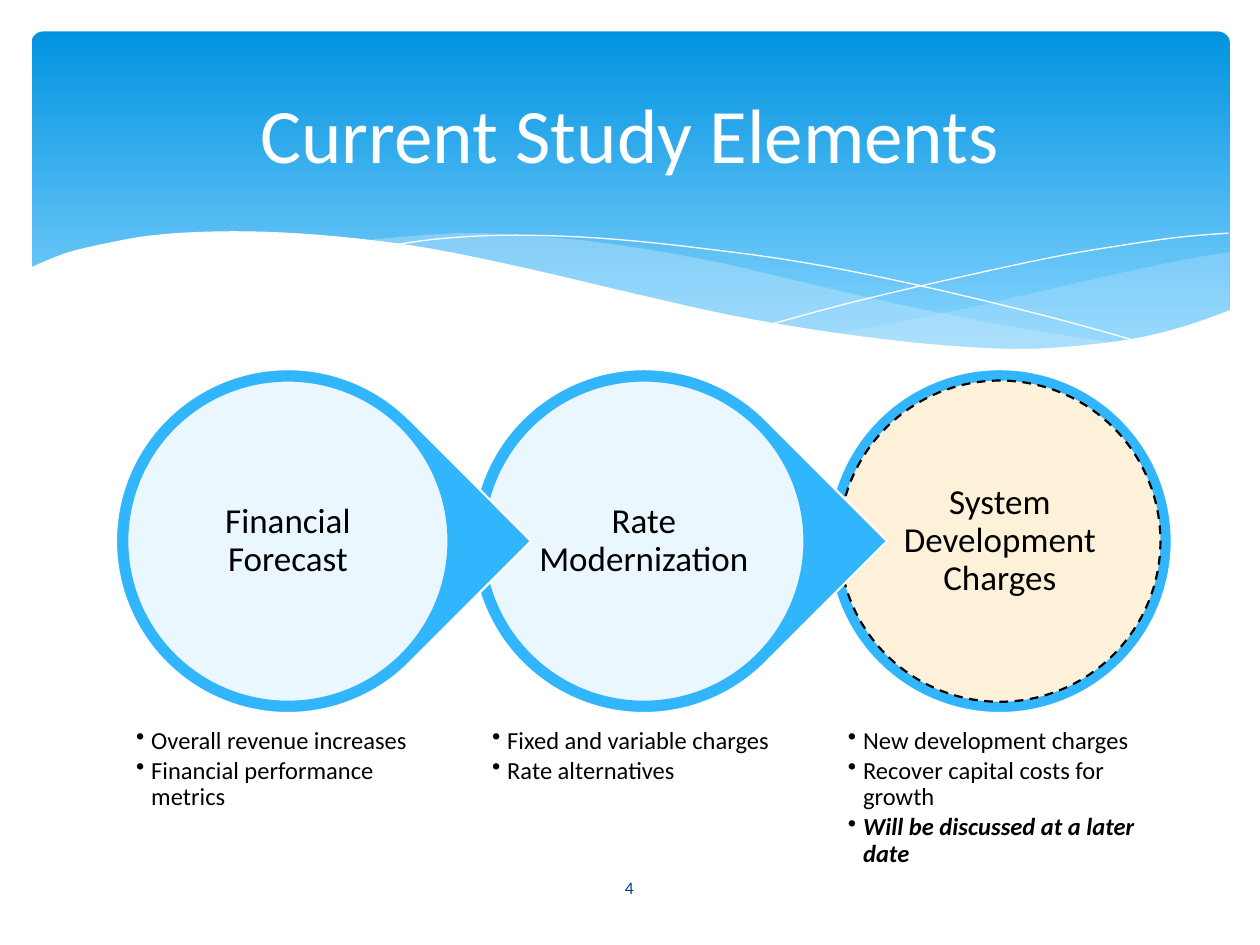
from lxml import etree
from pptx import Presentation
from pptx.dml.color import RGBColor
from pptx.enum.dml import MSO_LINE
from pptx.enum.shapes import MSO_SHAPE
from pptx.enum.text import MSO_ANCHOR, PP_ALIGN
from pptx.oxml.ns import qn
from pptx.util import Inches, Pt

ROUND, OVAL, TEAR = MSO_SHAPE.ROUNDED_RECTANGLE, MSO_SHAPE.OVAL, MSO_SHAPE.TEAR
TOP, MIDDLE = MSO_ANCHOR.TOP, MSO_ANCHOR.MIDDLE
LEFT, CENTER = PP_ALIGN.LEFT, PP_ALIGN.CENTER
DASH = MSO_LINE.DASH

FONT = "Calibri"
WHITE, BLACK, BLUE, MIST = "FFFFFF", "000000", "31B6FD", "C6E7FC"
START, PITCH, DISC, RING = 1.01, 2.825, 2.55, 2.73
MID = 4.295

STAGES = [
    ("Financial Forecast",
     ["Overall revenue increases", "Financial performance metrics"]),
    ("Rate Modernization",
     ["Fixed and variable charges", "Rate alternatives"]),
    ("System Development Charges",
     ["New development charges", "Recover capital costs for growth",
      "Will be discussed at a later date"]),
]

RIGHT_TOP = [(9.76, 2), (9.35, 2.07), (8.61, 2.23), (7.79, 2.42), (7.06, 2.57), (6.61, 2.65)]
RIGHT_LOW = [(6.61, 2.65), (7.05, 2.71), (7.57, 2.76), (8.14, 2.78), (8.63, 2.75),
             (9.05, 2.69), (9.42, 2.59), (9.76, 2.47)]
BAND_TOP = [(8.93, 2.73), (8.37, 2.65), (7.75, 2.54), (7.06, 2.4), (6.29, 2.22),
            (5.69, 2.08), (5.14, 1.98), (4.65, 1.91), (4.2, 1.87), (3.8, 1.85),
            (3.44, 1.86), (2.86, 1.91)]
BAND_LOW = [(2.86, 1.91), (3.42, 1.99), (4.04, 2.11), (4.91, 2.32), (5.66, 2.48),
            (6.34, 2.61), (6.95, 2.7), (7.48, 2.76), (7.96, 2.78), (8.48, 2.77), (8.93, 2.73)]
FALL = [(3.09, 1.95), (3.44, 1.9), (3.87, 1.87), (4.33, 1.87), (4.89, 1.9), (5.56, 1.97),
        (6.36, 2.08), (7.27, 2.26), (8.31, 2.51), (9.07, 2.72)]
RISE = [(6.13, 2.57), (6.72, 2.41), (7.48, 2.23), (8.36, 2.04), (8.95, 1.94),
        (9.38, 1.88), (9.75, 1.85)]
EDGE = [(9.77, 2.46), (9.4, 2.59), (8.99, 2.69), (8.5, 2.75), (8.09, 2.77), (7.61, 2.75),
        (7.08, 2.7), (6.48, 2.62), (5.79, 2.5), (5.03, 2.33), (4.18, 2.13), (3.4, 1.97),
        (2.71, 1.88), (2.11, 1.84), (1.61, 1.84), (1.19, 1.87), (0.85, 1.93),
        (0.52, 2.01), (0.23, 2.13)]
BASE = [(0.23, 3.29), (9.77, 3.29)]


def color(text):
    """Turn a hex string into a colour."""
    return RGBColor.from_string(text)


def paint(shape, fill=None, line=None, width=1.25, alpha=100):
    """Set the fill, opacity and outline of a shape."""
    shape.shadow.inherit = False
    if fill:
        shape.fill.solid()
        shape.fill.fore_color.rgb = color(fill)
    else:
        shape.fill.background()
    if alpha < 100:
        tint = shape.element.spPr.find(qn("a:solidFill")).find(qn("a:srgbClr"))
        etree.SubElement(tint, qn("a:alpha"), val=str(alpha * 1000))
    if line:
        shape.line.color.rgb = color(line)
        shape.line.width = Pt(width)
    else:
        shape.line.fill.background()


def smooth(points, steps=4):
    """Return a Catmull-Rom curve through the points."""
    ends = [points[0], *points, points[-1]]
    curve = [points[0]]
    for a, b, c, d in zip(ends, ends[1:], ends[2:], ends[3:]):
        for step in range(1, steps + 1):
            t = step / steps
            curve.append(tuple(
                (2 * q + (r - p) * t + (2 * p - 5 * q + 4 * r - s) * t ** 2
                 + (3 * q - p - 3 * r + s) * t ** 3) / 2
                for p, q, r, s in zip(a, b, c, d)))
    return curve


def add_wave(slide, points, close=True, **look):
    """Draw an outline through the points."""
    dots = [(Inches(x), Inches(y)) for x, y in points]
    pen = slide.shapes.build_freeform(*dots[0])
    pen.add_line_segments(dots[1:], close=close)
    paint(pen.convert_to_shape(), **look)


def add_round(slide, kind, mid, size, **look):
    """Draw a round shape centred on the row of stages."""
    shape = slide.shapes.add_shape(
        kind, Inches(mid - size / 2), Inches(MID - size / 2), Inches(size), Inches(size))
    paint(shape, **look)
    return shape


def add_text(slide, box, lines, size, ink=BLACK, align=CENTER, anchor=MIDDLE,
             inset=0.05, space=None, after=0):
    """Add a text box and return its paragraphs."""
    frame = slide.shapes.add_textbox(*map(Inches, box)).text_frame
    frame.word_wrap = True
    frame.vertical_anchor = anchor
    frame.margin_left = frame.margin_right = Inches(inset)
    frame.margin_top = frame.margin_bottom = Inches(inset)
    frame.text = "\n".join(lines)
    for para in frame.paragraphs:
        para.alignment = align
        para.line_spacing = space
        para.space_after = Pt(after)
        para.font.name = FONT
        para.font.size = Pt(size)
        para.font.color.rgb = color(ink)
    return frame.paragraphs


def add_bullets(slide, box, lines):
    """Add a bulleted list and return its paragraphs."""
    paras = add_text(slide, box, lines, 14, align=LEFT, anchor=TOP,
                     inset=0.07, space=0.9, after=2)
    for para in paras:
        props = para._p.get_or_add_pPr()
        props.set("marL", str(Inches(0.12)))
        props.set("indent", str(Inches(-0.12)))
        mark = etree.Element(qn("a:buChar"), char="•")
        props.find(qn("a:defRPr")).addprevious(mark)
    return paras


def add_banner(slide):
    """Draw the gradient banner and its waves."""
    panel = slide.shapes.add_shape(ROUND, *map(Inches, (0.25, 0.25, 9.51, 2.7)))
    panel.adjustments[0] = 0.034
    paint(panel)
    panel.fill.gradient()
    panel.fill.gradient_angle = 270
    stops = [(0, "0293E0"), (0.9, "83D3FE")]
    for stop, (place, tint) in zip(panel.fill.gradient_stops, stops):
        stop.position = place
        stop.color.rgb = color(tint)
    add_wave(slide, smooth(RIGHT_TOP) + smooth(RIGHT_LOW), fill=MIST, alpha=29)
    add_wave(slide, smooth(BAND_TOP) + smooth(BAND_LOW), fill=MIST, alpha=40)
    for line in (FALL, RISE):
        add_wave(slide, smooth(line), close=False, line=WHITE, width=0)
    add_wave(slide, smooth(EDGE) + BASE, fill=WHITE)


def add_stage(slide, index, name, points):
    """Draw one stage with its label and bullets."""
    left = START + index * PITCH
    mid = left + DISC / 2
    last = index == len(STAGES) - 1
    ring = add_round(slide, OVAL if last else TEAR, mid, RING, fill=BLUE, line=WHITE)
    if last:
        disc = add_round(slide, OVAL, mid, DISC, fill="FDF2D9", line=BLACK)
        disc.line.dash_style = DASH
    else:
        ring.rotation = 45
        add_round(slide, OVAL, mid, DISC, fill=WHITE, line=BLUE, alpha=90)
    add_text(slide, (mid - 0.91, MID - 0.91, 1.82, 1.82), [name], 20,
             inset=0.03, space=0.9, after=7)
    paras = add_bullets(slide, (left, 5.71, DISC, 1.5), points)
    if last:
        paras[-1].font.bold = paras[-1].font.italic = True


def main():
    """Build and save the slide."""
    deck = Presentation()
    deck.slide_width, deck.slide_height = Inches(10), Inches(7.5)
    slide = deck.slides.add_slide(deck.slide_layouts[6])
    add_banner(slide)
    add_text(slide, (0.5, 0.37, 9, 1.37), ["Current Study Elements"], 44, WHITE)
    add_text(slide, (4.36, 6.84, 1.27, 0.4), ["4"], 10, "073E87")
    for index, (name, points) in reversed(list(enumerate(STAGES))):
        add_stage(slide, index, name, points)
    deck.save("out.pptx")


if __name__ == "__main__":
    main()
